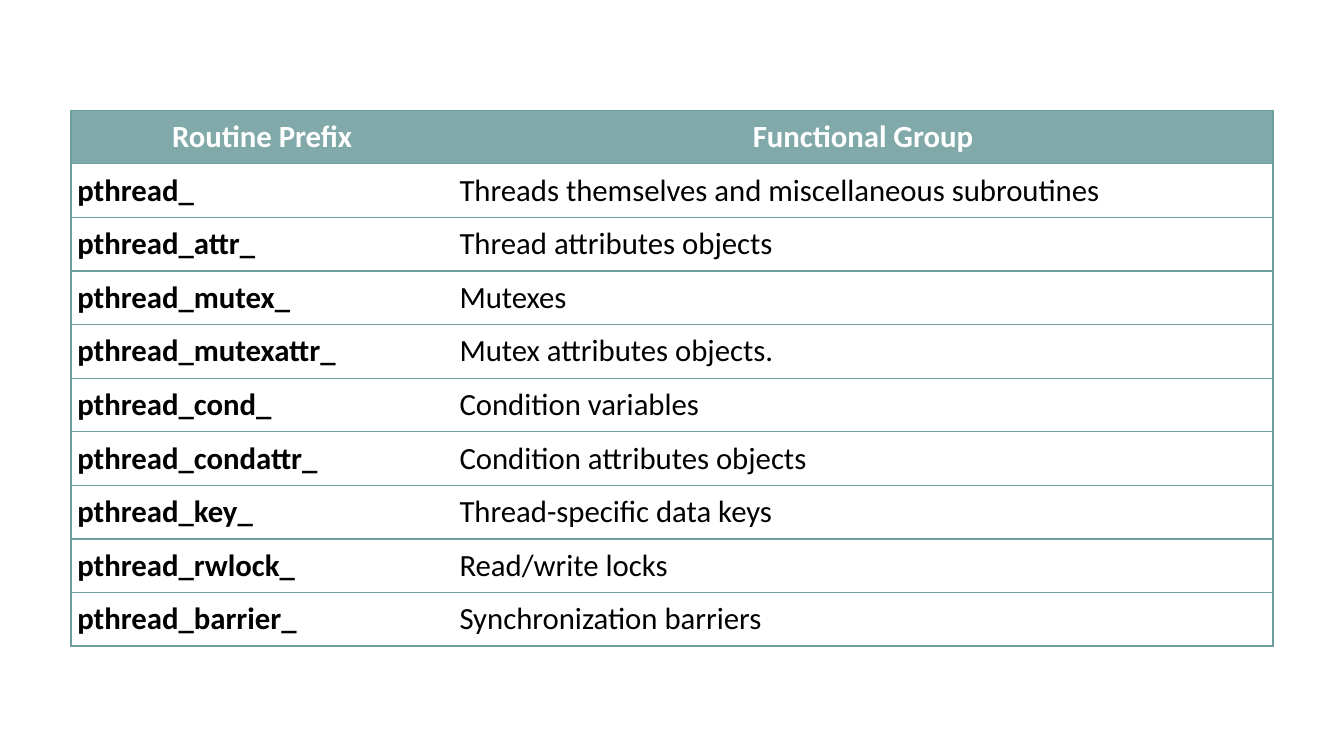
from dataclasses import dataclass
from typing import NamedTuple

from lxml import etree
from pptx import Presentation
from pptx import util as u
from pptx.dml.color import RGBColor
from pptx.enum import text
from pptx.oxml import ns


@dataclass(frozen=True)
class Theme:
    font: str = "Calibri"
    size: float = 22
    paper: str = "FFFFFF"
    ink: str = "000000"
    header: str = "81A9A9"
    rule: str = "6E9D9D"
    rule_width: float = 1
    inset: float = 0.16


class Routine(NamedTuple):
    prefix: str
    group: str


THEME = Theme()
HEADINGS = Routine("Routine Prefix", "Functional Group")
ROUTINES = [
    Routine("pthread_", "Threads themselves and miscellaneous subroutines"),
    Routine("pthread_attr_", "Thread attributes objects"),
    Routine("pthread_mutex_", "Mutexes"),
    Routine("pthread_mutexattr_", "Mutex attributes objects."),
    Routine("pthread_cond_", "Condition variables"),
    Routine("pthread_condattr_", "Condition attributes objects"),
    Routine("pthread_key_", "Thread-specific data keys"),
    Routine("pthread_rwlock_", "Read/write locks"),
    Routine("pthread_barrier_", "Synchronization barriers"),
]
COLUMN_WIDTHS = (9.63, 20.66)
ROW_HEIGHT = 1.35


def write(cell, wording: str, *, color: str, bold: bool, centered: bool) -> None:
    cell.vertical_anchor = text.MSO_ANCHOR.MIDDLE
    cell.margin_left = cell.margin_right = u.Cm(THEME.inset)
    cell.margin_top = cell.margin_bottom = u.Cm(THEME.inset)
    paragraph = cell.text_frame.paragraphs[0]
    paragraph.alignment = text.PP_ALIGN.CENTER if centered else text.PP_ALIGN.LEFT
    run = paragraph.add_run()
    run.text = wording
    run.font.name = THEME.font
    run.font.size = u.Pt(THEME.size)
    run.font.bold = bold
    run.font.color.rgb = RGBColor.from_string(color)


def rule_cell(cell, ruled_sides: str) -> None:
    """Draw the sides named in ruled_sides and clear the others."""
    properties = cell._tc.get_or_add_tcPr()
    for position, side in enumerate("LRTB"):
        line = etree.Element(ns.qn(f"a:ln{side}"), w=str(u.Pt(THEME.rule_width)))
        if side in ruled_sides:
            fill = etree.SubElement(line, ns.qn("a:solidFill"))
            etree.SubElement(fill, ns.qn("a:srgbClr"), val=THEME.rule)
        else:
            etree.SubElement(line, ns.qn("a:noFill"))
        properties.insert(position, line)


def add_routine_table(slide) -> None:
    rows = [HEADINGS, *ROUTINES]
    table = slide.shapes.add_table(
        len(rows), len(COLUMN_WIDTHS), u.Cm(1.79), u.Cm(2.78),
        u.Cm(sum(COLUMN_WIDTHS)), u.Cm(ROW_HEIGHT * len(rows)),
    ).table
    table.first_row = True
    table.horz_banding = False
    for column, width in zip(table.columns, COLUMN_WIDTHS):
        column.width = u.Cm(width)

    for row_index, routine in enumerate(rows):
        table.rows[row_index].height = u.Cm(ROW_HEIGHT)
        is_header = row_index == 0
        for column_index, wording in enumerate(routine):
            is_prefix = column_index == 0
            cell = table.cell(row_index, column_index)
            write(cell, wording, color=THEME.paper if is_header else THEME.ink,
                  bold=is_header or is_prefix, centered=is_header)
            cell.fill.solid()
            cell.fill.fore_color.rgb = RGBColor.from_string(
                THEME.header if is_header else THEME.paper)
            rule_cell(cell, "LTB" if is_prefix else "RTB")


def main() -> None:
    deck = Presentation()
    deck.slide_width, deck.slide_height = u.Cm(33.87), u.Cm(19.05)

    # Blank layout on a white background
    slide = deck.slides.add_slide(deck.slide_layouts[6])
    slide.background.fill.solid()
    slide.background.fill.fore_color.rgb = RGBColor.from_string(THEME.paper)

    # Routine prefixes and their functional groups
    add_routine_table(slide)
    deck.save("out.pptx")


if __name__ == "__main__":
    main()
